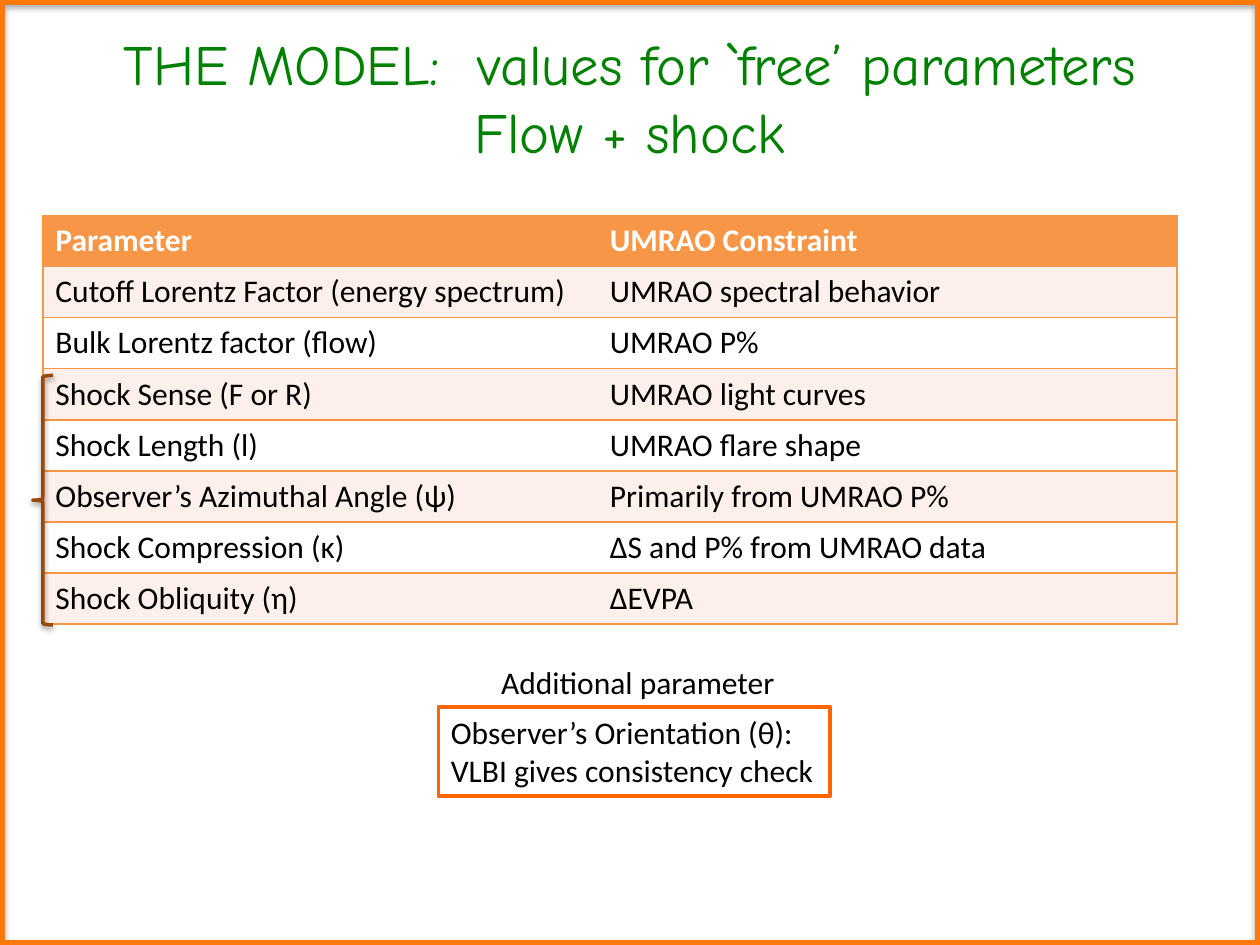
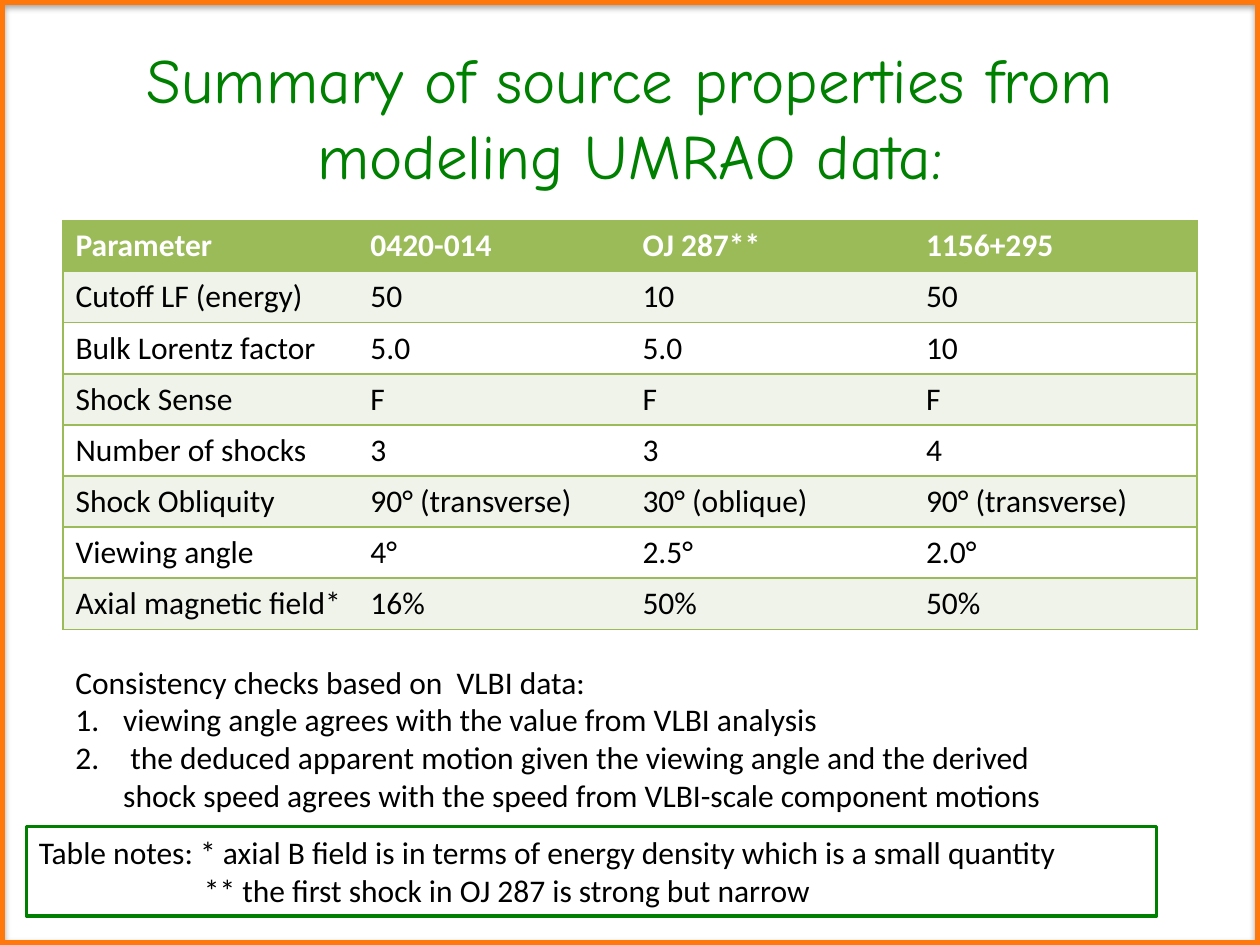
from dataclasses import dataclass

from lxml.etree import SubElement
from pptx import Presentation
from pptx.dml.color import RGBColor
from pptx.enum.shapes import MSO_SHAPE
from pptx.enum.text import MSO_ANCHOR, MSO_AUTO_SIZE, PP_ALIGN
from pptx.oxml.ns import qn
from pptx.util import Inches, Pt


@dataclass(frozen=True)
class Theme:
    """Colours, fonts and type sizes of the deck."""
    head: str = "Comic Neue"
    body: str = "Calibri"
    size: float = 18
    green: str = "008000"
    black: str = "000000"
    white: str = "FFFFFF"
    frame: str = "FE780B"
    brace: str = "984807"
    box: str = "FF6600"
    warm: tuple = ("F79646", "FDEFE9")
    cool: tuple = ("9BBB59", "EFF3EA")


THEME = Theme()

MODEL = [
    ("Parameter", "UMRAO Constraint"),
    ("Cutoff Lorentz Factor (energy spectrum)", "UMRAO spectral behavior"),
    ("Bulk Lorentz factor (flow)", "UMRAO P%"),
    ("Shock Sense (F or R)", "UMRAO light curves"),
    ("Shock Length (l)", "UMRAO flare shape"),
    ("Observer’s Azimuthal Angle (ψ)", "Primarily from UMRAO P%"),
    ("Shock Compression (κ)", "ΔS and P% from UMRAO data"),
    ("Shock Obliquity (η)", "ΔEVPA"),
]

SOURCES = [
    ("Parameter", "0420-014", "OJ 287**", "1156+295"),
    ("Cutoff LF (energy)", "50", "10", "50"),
    ("Bulk Lorentz factor", "5.0", "5.0", "10"),
    ("Shock Sense", "F", "F", "F"),
    ("Number of shocks", "3", "3", "4"),
    ("Shock Obliquity", "90° (transverse)", "30° (oblique)", "90° (transverse)"),
    ("Viewing angle", "4°", "2.5°", "2.0°"),
    ("Axial magnetic field*", "16%", "50%", "50%"),
]


def tint(hue):
    """Turn a hex string into a colour."""
    return RGBColor.from_string(hue)


def style(para, size=THEME.size, hue=THEME.black, face=THEME.body, bold=False):
    """Set the font of a paragraph."""
    font = para.font
    font.size, font.name, font.bold = Pt(size), face, bold
    font.color.rgb = tint(hue)


def indent(para, left, first=0, number=False):
    """Indent a paragraph and number it if asked."""
    props = para._p.get_or_add_pPr()
    props.set("marL", str(Inches(left)))
    props.set("indent", str(Inches(first)))
    if number:
        SubElement(props, qn("a:buFont"), typeface="+mj-lt")
        SubElement(props, qn("a:buAutoNum"), type="arabicPeriod")


def shade(shape, alpha, dist):
    """Give a shape a soft shadow that falls straight down."""
    shape.shadow.inherit = False
    glow = shape._element.spPr.find(qn("a:effectLst"))
    cast = SubElement(glow, qn("a:outerShdw"), blurRad=str(Pt(3.1)),
                      dist=str(Pt(dist)), dir="5400000", rotWithShape="0")
    hue = SubElement(cast, qn("a:srgbClr"), val=THEME.black)
    SubElement(hue, qn("a:alpha"), val=str(alpha * 1000))


def outline(slide, kind, area, hue, width, alpha, dist):
    """Draw an unfilled shape with a shadow."""
    shape = slide.shapes.add_shape(kind, *map(Inches, area))
    shape.fill.background()
    shape.line.color.rgb = tint(hue)
    shape.line.width = Pt(width)
    shade(shape, alpha, dist)


def start(deck, text, top, size):
    """Add a framed slide with its title."""
    slide = deck.slides.add_slide(deck.slide_layouts[5])
    outline(slide, MSO_SHAPE.RECTANGLE, (0, 0, 10, 7.5), THEME.frame, 6, 35, 1.8)
    title = slide.shapes.title
    title.left, title.top = Inches(0.5), Inches(top)
    title.width, title.height = Inches(9), Inches(1.25)
    frame = title.text_frame
    frame.text = text
    frame.auto_size = MSO_AUTO_SIZE.NONE
    frame.vertical_anchor = MSO_ANCHOR.MIDDLE
    para = frame.paragraphs[0]
    para.alignment = PP_ALIGN.CENTER
    style(para, size, THEME.green, THEME.head)
    return slide


def note(slide, area, lines, edge=None, width=2):
    """Add a text box; each line is its text and optional indent settings."""
    box = slide.shapes.add_textbox(*map(Inches, area))
    frame = box.text_frame
    frame.word_wrap = True
    if edge:
        box.line.color.rgb = tint(edge)
        box.line.width = Pt(width)
    for spot, (text, *inset) in enumerate(lines):
        para = frame.add_paragraph() if spot else frame.paragraphs[0]
        para.text = text
        if inset:
            indent(para, *inset)
        style(para)


def border(cell, hue, sides):
    """Rule the named sides of a cell and clear the others."""
    props = cell._tc.get_or_add_tcPr()
    for side in "LRTB":
        line = SubElement(props, qn(f"a:ln{side}"), w=str(Pt(1)))
        if side in sides:
            fill = SubElement(line, qn("a:solidFill"))
            SubElement(fill, qn("a:srgbClr"), val=hue)
        else:
            SubElement(line, qn("a:noFill"))


def grid(slide, left, top, widths, rows, hues):
    """Add a banded table with horizontal rules and an outer edge."""
    main, band = hues
    area = (left, top, sum(widths), 3.24)
    table = slide.shapes.add_table(len(rows), len(widths), *map(Inches, area)).table
    for col, width in zip(table.columns, widths):
        col.width = Inches(width)
    last = len(widths) - 1
    for down, row in enumerate(rows):
        back = band if down % 2 else THEME.white
        for over, text in enumerate(row):
            cell = table.cell(down, over)
            cell.text = text
            border(cell, main, "TB" + "L" * (over == 0) + "R" * (over == last))
            cell.fill.solid()
            cell.fill.fore_color.rgb = tint(back if down else main)
            style(cell.text_frame.paragraphs[0], bold=not down,
                  hue=THEME.black if down else THEME.white)


def model(deck):
    """Build the slide on free parameters."""
    slide = start(deck, "THE MODEL:  values for `free’ parameters\vFlow + shock",
                  0.14, 32.4)
    grid(slide, 0.34, 1.71, (4.4, 4.6), MODEL, THEME.warm)
    outline(slide, MSO_SHAPE.LEFT_BRACE, (0.26, 2.98, 0.16, 1.98),
            THEME.brace, 2, 38, 1.6)
    note(slide, (3.48, 5.61, 3.11, 0.71),
         [("Observer’s Orientation (θ):",), ("VLBI gives consistency check",)],
         THEME.box, 2.25)
    note(slide, (3.88, 5.21, 2.47, 0.4), [("Additional parameter",)])


def summary(deck):
    """Build the slide on source properties."""
    slide = start(deck, "Summary of source properties from modeling UMRAO data:",
                  0.3, 36)
    grid(slide, 0.5, 1.75, (2.34, 2.16, 2.25, 2.25), SOURCES, THEME.cool)
    note(slide, (0.5, 5.21, 8.33, 1.31), [
        ("Consistency checks based on  VLBI data:",),
        ("viewing angle agrees with the value from VLBI analysis", 0.38, -0.38, True),
        (" the deduced apparent motion given the viewing angle and the derived "
         "shock speed agrees with the speed from VLBI-scale component motions",
         0.38, -0.38, True),
    ])
    note(slide, (0.21, 6.56, 8.97, 0.71), [
        ("Table notes: * axial B field is in terms of energy density "
         "which is a small quantity",),
        ("** the first shock in OJ 287 is strong but narrow", 1.31),
    ], THEME.green)


def main():
    """Build and save the deck."""
    deck = Presentation()
    deck.slide_width, deck.slide_height = Inches(10), Inches(7.5)
    model(deck)
    summary(deck)
    deck.save("out.pptx")


if __name__ == "__main__":
    main()
